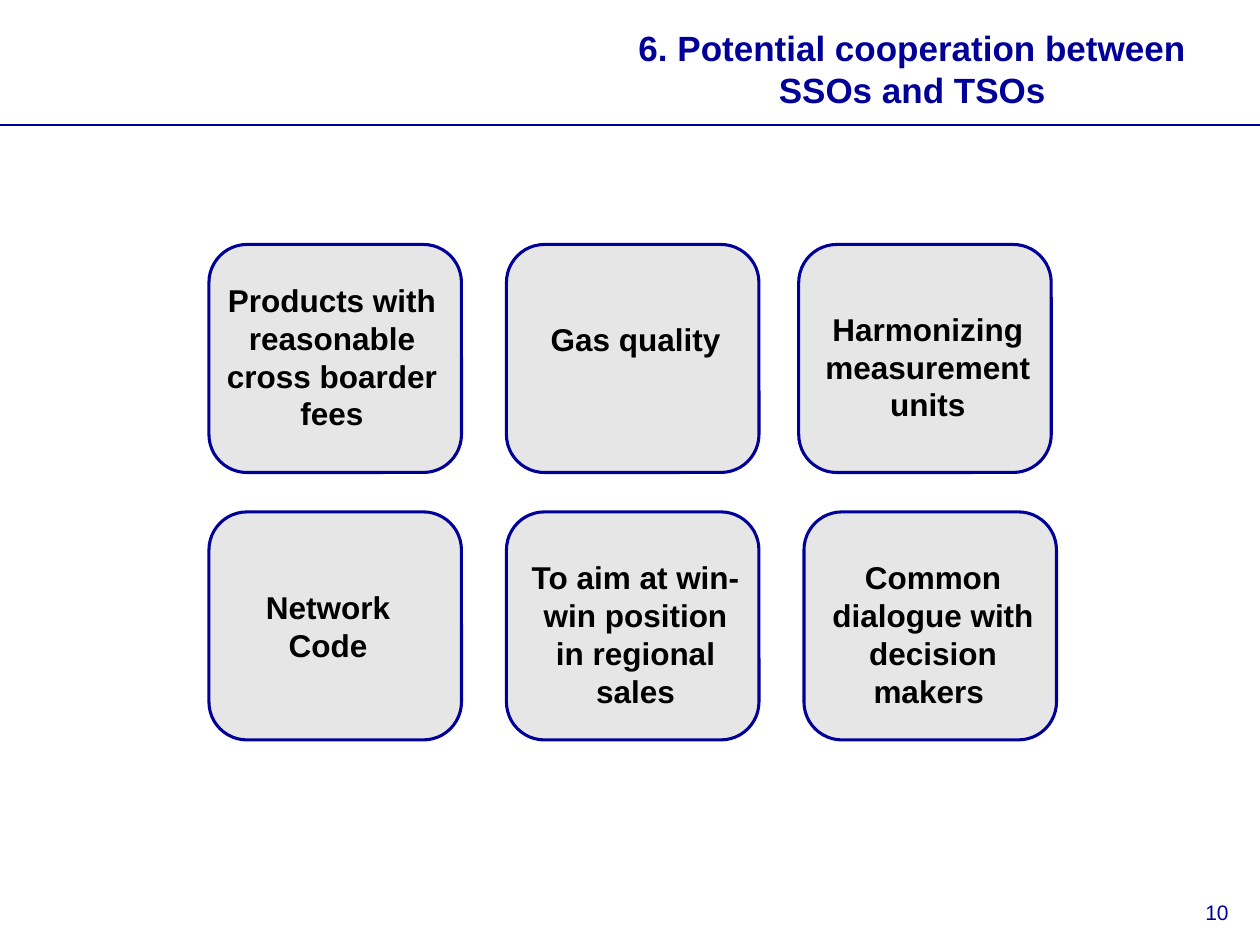
"""Builds the slide on potential cooperation between SSOs and TSOs."""
import pptx
import pptx.dml.color
import pptx.enum.shapes
import pptx.enum.text
import pptx.oxml
import pptx.oxml.ns
import pptx.util

Pt = pptx.util.Pt
ALIGN = pptx.enum.text.PP_ALIGN
COLORS = {"navy": "000099", "card": "E6E6E6", "text": "000000"}


class SlideBuilder:
    """Holds the style and the current slide."""

    font = "Arial"

    def __init__(self, slide):
        self.s = slide

    def color(self, name):
        return pptx.dml.color.RGBColor.from_string(COLORS[name])

    def set_text(self, tf, text, size, color, align, bold=False):
        tf.word_wrap = True
        tf.auto_size = pptx.enum.text.MSO_AUTO_SIZE.NONE
        tf.vertical_anchor = pptx.enum.text.MSO_ANCHOR.TOP
        p = tf.paragraphs[0]
        p.text = text
        p.alignment = align
        p.font.name = self.font
        p.font.size = Pt(size)
        p.font.bold = bold
        p.font.color.rgb = self.color(color)

    def title(self, text, left, top, width, height):
        sp = self.s.shapes.title
        sp.left, sp.top, sp.width, sp.height = map(Pt, (left, top, width, height))
        tf = sp.text_frame
        tf.margin_left = tf.margin_top = tf.margin_right = tf.margin_bottom = 0
        self.set_text(tf, text, 20, "navy", ALIGN.CENTER, True)

    def rule(self, x1, x2, y):
        ln = self.s.shapes.add_connector(
            pptx.enum.shapes.MSO_CONNECTOR.STRAIGHT, Pt(x1), Pt(y), Pt(x2), Pt(y))
        ln.line.color.rgb = self.color("navy")
        ln.line.width = Pt(0.75)
        props = ln._element.find(pptx.oxml.ns.qn("p:spPr"))
        props.append(pptx.oxml.parse_xml(f'<a:effectLst {pptx.oxml.ns.nsdecls("a")}/>'))

    def text(self, text, left, top, width, height, size, color, align, bold=False):
        sp = self.s.shapes.add_textbox(Pt(left), Pt(top), Pt(width), Pt(height))
        self.set_text(sp.text_frame, text, size, color, align, bold)

    def card(self, left, top, width, height):
        sp = self.s.shapes.add_shape(
            pptx.enum.shapes.MSO_SHAPE.FLOWCHART_ALTERNATE_PROCESS,
            Pt(left), Pt(top), Pt(width), Pt(height))
        sp.shadow.inherit = False
        sp.fill.solid()
        sp.fill.fore_color.rgb = self.color("card")
        sp.line.color.rgb = self.color("navy")
        sp.line.width = Pt(1.75)


def main():
    prs = pptx.Presentation()
    prs.slide_width, prs.slide_height = Pt(720), Pt(540)
    b = SlideBuilder(prs.slides.add_slide(prs.slide_layouts[5]))

    b.rule(0, 720, 71.4)
    b.text("10", 541.4, 510.5, 167.8, 37.4, 12, "navy", ALIGN.RIGHT)
    b.title("6. Potential cooperation between SSOs and TSOs", 348.5, 15.1, 345.6, 56.9)

    top_row, bottom_row = 139.7, 292.5
    cards = [
        (456.4, top_row, "Harmonizing measurement units", 5.8, 33.8, 136, 3),
        (289.4, top_row, "Gas quality", 5.8, 39.6, 136, 1),
        (119.4, bottom_row, "Network Code", 5.8, 40.2, 124.6, 2),
        (119.4, top_row, "Products with reasonable cross boarder fees", -3.5, 17.3, 147.6, 4),
        (459.4, bottom_row, "Common dialogue with decision makers ", 5.8, 23, 136, 4),
        (289.4, bottom_row, "To aim at win-win position in regional sales", 5.8, 23, 136, 4),
    ]
    for left, top, label, dx, dy, width, lines in cards:
        b.card(left, top, 144.3, 130.3)
        b.text(label, left + dx, top + dy, width, 7.2 + 21.8 * lines,
               18, "text", ALIGN.CENTER, True)

    prs.save("out.pptx")


if __name__ == "__main__":
    main()
